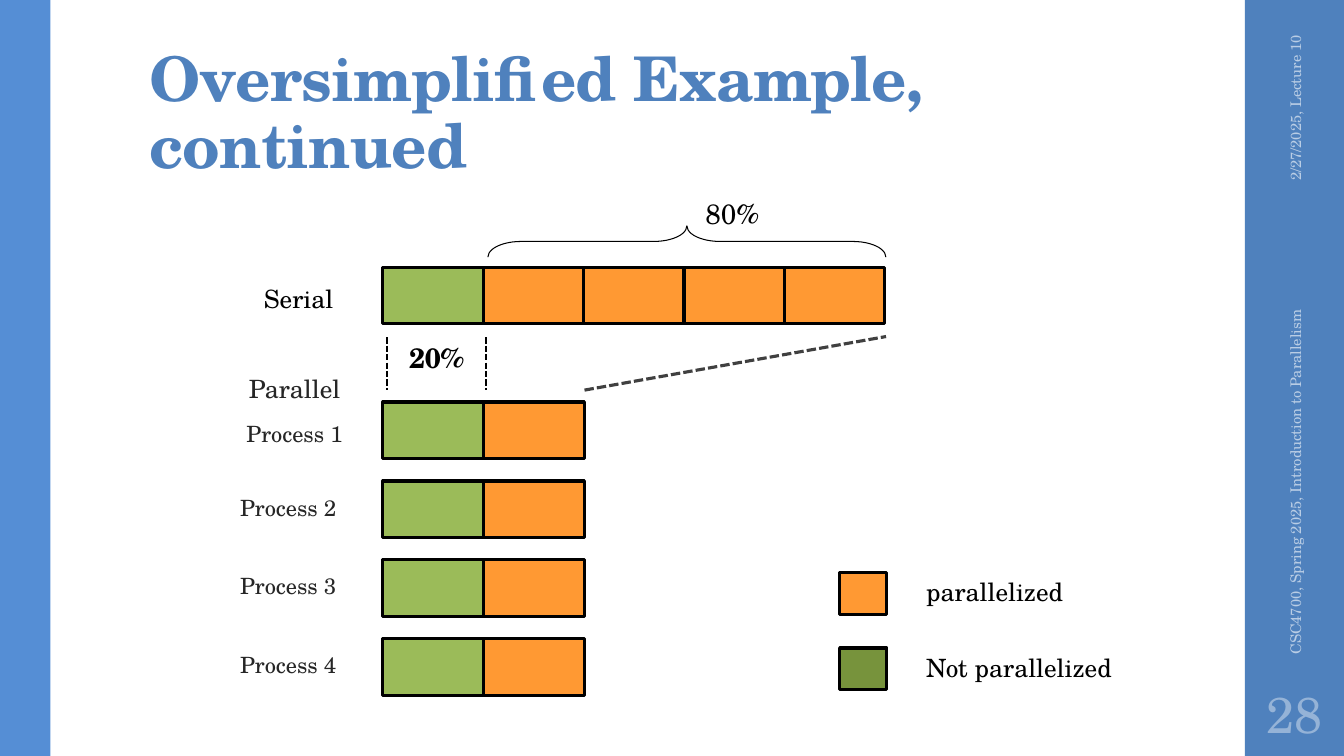
from collections import namedtuple
from lxml.etree import SubElement
from pptx import Presentation
from pptx.dml.color import RGBColor
from pptx.enum.dml import MSO_LINE
from pptx.enum.shapes import MSO_CONNECTOR, MSO_SHAPE
from pptx.enum.text import MSO_ANCHOR, PP_ALIGN
from pptx.oxml.ns import qn
from pptx.util import Cm, Pt

Theme = namedtuple("Theme", "font title sidebar stripe number footer ink label slope "
                   "serial_part parallel_part legend_serial "
                   "title_size number_size share_size label_size process_size footer_size")
theme = Theme("TeX Gyre Schola", "4F81BD", "4F81BD", "558ED5", "95B3D7", "B9CDE5",
              "000000", "262626", "404040", "9BBB59", "FF9933", "77933C",
              44, 36, 20, 18, 16, 10.5)

TITLE = "Oversimplified Example, continued"
NUMBER = "28"
FOOTERS = [
    ("2/27/2025, Lecture 10", (30, 2.77, 5.28, 1.02), PP_ALIGN.RIGHT),
    ("CSC4700, Spring 2025, Introduction to Parallelism", (27.66, 11.25, 9.96, 1.02), PP_ALIGN.LEFT),
]
SIDEBARS = [((31.37, 0, 2.5, 19.05), theme.sidebar), ((0, 0, 1.27, 19.05), theme.stripe)]
SHARES = [("20%", (10.31, 8.58, 1.5, 0.91), True), ("80%", (17.78, 4.95, 1.5, 0.91), False)]
SERIAL = "Serial"
PARALLEL = "Parallel"
PROCESSES = ["Process 1", "Process 2", "Process 3", "Process 4"]
LEGEND = [("parallelized", theme.parallel_part), ("Not parallelized", theme.legend_serial)]

BARS_LEFT, BAR_HEIGHT = 9.65, 1.42
SERIAL_TOP, SERIAL_PART_WIDTH, SERIAL_PARTS = 6.74, 2.53, 5
PROCESS_TOP, PROCESS_PITCH, PROCESS_PART_WIDTH = 10.13, 1.99, 2.54
LEGEND_LEFT, LEGEND_TOP, LEGEND_PITCH = 21.16, 14.43, 1.9
BRACE_CENTRE, BRACE_TOP, BRACE_DEPTH, BRACE_SPAN = 17.31, 5.69, 0.79, 10.03
GUIDES = [
    ((9.75, 8.5), (9.75, 9.83), theme.ink, 1.5),
    ((12.24, 8.5), (12.24, 9.83), theme.ink, 1.5),
    ((14.73, 9.83), (22.33, 8.48), theme.slope, 2.25),
]

deck = Presentation()
deck.slide_width, deck.slide_height = Cm(33.87), Cm(19.05)
slide = deck.slides.add_slide(deck.slide_layouts[6])


def colour(code):
    return RGBColor.from_string(code)


def add_block(box, fill, outline=True):
    block = slide.shapes.add_shape(MSO_SHAPE.RECTANGLE, *map(Cm, box))
    block.shadow.inherit = False
    block.fill.solid()
    block.fill.fore_color.rgb = colour(fill)
    if outline:
        block.line.color.rgb = colour(theme.ink)
        block.line.width = Pt(2.25)
    else:
        block.line.fill.background()


def add_bar(top, part_width, parts):
    for part in range(parts):
        fill = theme.parallel_part if part else theme.serial_part
        add_block((BARS_LEFT + part * part_width, top, part_width, BAR_HEIGHT), fill)


def add_text(box, lines, ink, bold=False, align=PP_ALIGN.LEFT, anchor=MSO_ANCHOR.TOP,
             insets=(0, 0, 0, 0), gap=0, spacing=None, tracking=0, rotation=0):
    label = slide.shapes.add_textbox(*map(Cm, box))
    label.rotation = rotation
    frame = label.text_frame
    frame.word_wrap = True
    frame.vertical_anchor = anchor
    frame.margin_left, frame.margin_top, frame.margin_right, frame.margin_bottom = map(Cm, insets)
    for index, (wording, size) in enumerate(lines):
        paragraph = frame.add_paragraph() if index else frame.paragraphs[0]
        paragraph.alignment = align
        if index:
            paragraph.space_before = Pt(gap)
        if spacing:
            paragraph.line_spacing = spacing
        run = paragraph.add_run()
        run.text = wording
        if tracking:
            run._r.get_or_add_rPr().set("spc", str(tracking))
        paragraph.font.name = theme.font
        paragraph.font.size = Pt(size)
        paragraph.font.bold = bold
        paragraph.font.color.rgb = colour(ink)


def add_guide(start, end, ink, weight):
    guide = slide.shapes.add_connector(MSO_CONNECTOR.STRAIGHT, *map(Cm, start + end))
    guide.line.color.rgb = colour(ink)
    guide.line.width = Pt(weight)
    guide.line.dash_style = MSO_LINE.SQUARE_DOT
    SubElement(guide._element.spPr, qn("a:effectLst"))


def add_brace():
    brace = slide.shapes.add_shape(
        MSO_SHAPE.LEFT_BRACE, Cm(BRACE_CENTRE - BRACE_DEPTH / 2),
        Cm(BRACE_TOP + BRACE_DEPTH / 2 - BRACE_SPAN / 2), Cm(BRACE_DEPTH), Cm(BRACE_SPAN))
    brace.rotation = 90
    brace.adjustments[0] = 1.06
    brace.shadow.inherit = False
    brace.fill.background()
    brace.line.color.rgb = colour(theme.ink)
    brace.line.width = Pt(0.75)


for box, fill in SIDEBARS:
    add_block(box, fill, outline=False)
add_text((3.51, 0.81, 26.92, 3.89), [(TITLE, theme.title_size)], theme.title, bold=True,
         anchor=MSO_ANCHOR.BOTTOM, insets=(0.25, 0.08, 0.25, 0.13), spacing=0.9, tracking=-50)
add_text((31.37, 17.15, 2.5, 1.65), [(NUMBER, theme.number_size)], theme.number,
         align=PP_ALIGN.CENTER, anchor=MSO_ANCHOR.MIDDLE, insets=(0.13,) * 4)
for wording, box, align in FOOTERS:
    add_text(box, [(wording, theme.footer_size)], theme.footer, align=align,
             anchor=MSO_ANCHOR.MIDDLE, insets=(0.25, 0.13, 0.25, 0.13), rotation=270)

add_brace()
for wording, box, bold in SHARES:
    add_text(box, [(wording, theme.share_size)], theme.ink, bold=bold, tracking=-20)
for guide in GUIDES:
    add_guide(*guide)

add_text((6.65, 7.14, 2.03, 0.76), [(SERIAL, theme.label_size)], theme.ink)
add_bar(SERIAL_TOP, SERIAL_PART_WIDTH, SERIAL_PARTS)

add_text((5.89, 9.4, 3.07, 1.98),
         [(PARALLEL, theme.label_size), (PROCESSES[0], theme.process_size)],
         theme.label, align=PP_ALIGN.CENTER, gap=12.1)
for row, process in enumerate(PROCESSES):
    top = PROCESS_TOP + row * PROCESS_PITCH
    add_bar(top, PROCESS_PART_WIDTH, 2)
    if row:
        add_text((6.05, top + 0.32, 3.07, 0.71), [(process, theme.process_size)], theme.label)

for row, (meaning, fill) in enumerate(LEGEND):
    top = LEGEND_TOP + row * LEGEND_PITCH
    add_block((LEGEND_LEFT, top, 1.19, 1.05), fill)
    add_text((LEGEND_LEFT + 2.18, top + 0.1, 5.2, 0.8), [(meaning, theme.label_size)], theme.ink)

deck.save("out.pptx")
